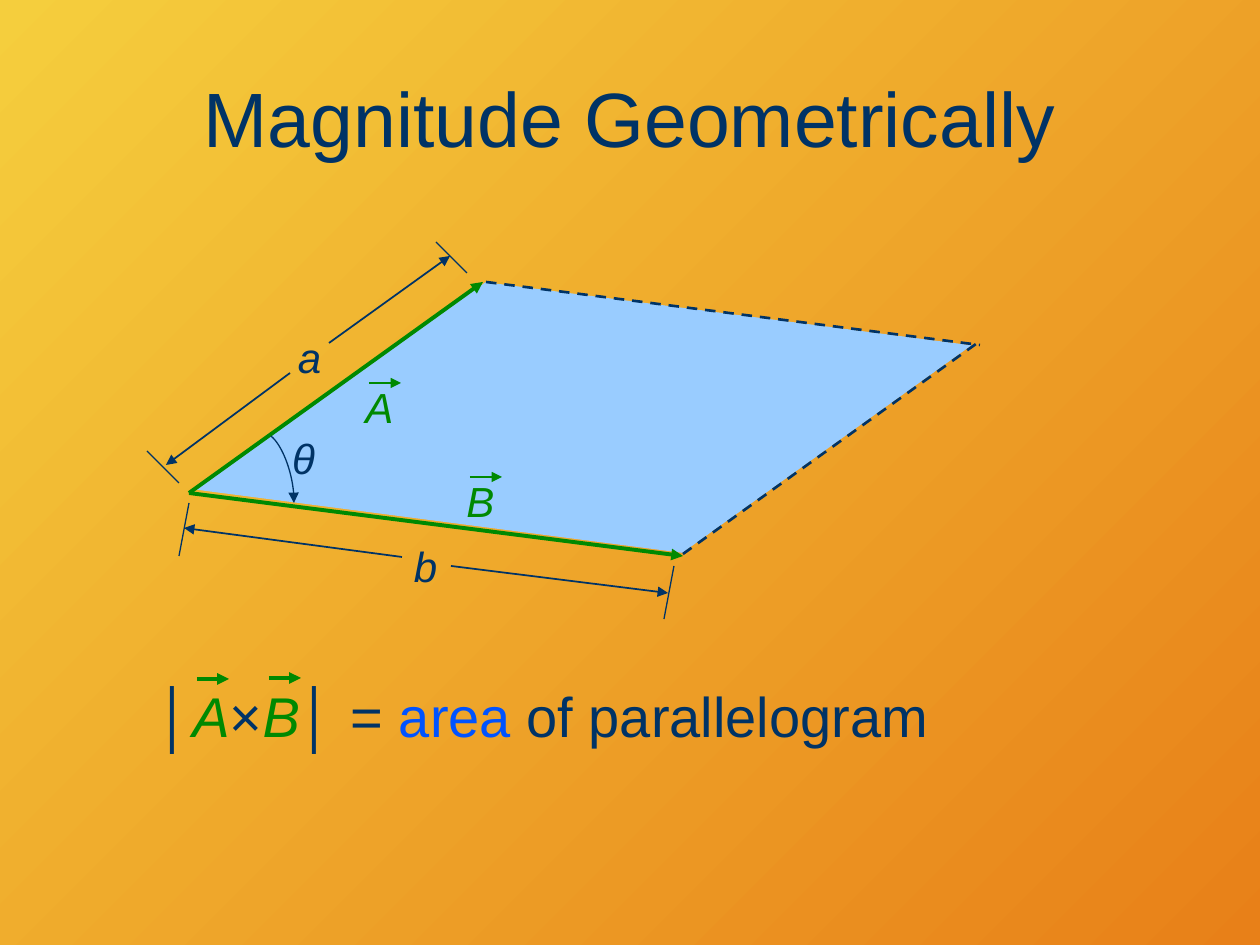
import pptx
import pptx.util
import pptx.dml.color
import pptx.enum.dml
import pptx.enum.shapes
import pptx.enum.text
import pptx.oxml
import pptx.oxml.ns

NAVY, GREEN, BLUE, SKY = "003366", "008901", "0053FF", "99CCFF"
SUNNY, AMBER = "F5CE3D", "E88018"
FONT = "Arial"
SCALE = 914400 / 126

TITLE = [("Magnitude Geometrically", NAVY, False)]
RULE = [
    ("│", NAVY, False), ("A", GREEN, True), ("×", NAVY, False), ("B", GREEN, True),
    ("│ = ", NAVY, False), ("area", BLUE, False), (" of parallelogram", NAVY, False),
]
LABELS = [
    ("A", GREEN, 353, 375), ("B", GREEN, 454, 469),
    ("a", NAVY, 283, 325), ("b", NAVY, 399, 534), ("θ", NAVY, 277, 426),
]
SIDES = [(189, 493, 483, 282), (189, 493, 683, 556)]
EDGES = [(683, 554, 976, 344), (486, 282, 980, 345)]
TICKS = [
    (189, 503, 179, 556), (674, 566, 664, 619),
    (179, 483, 147, 451), (467, 273, 436, 242),
]
SPANS = [
    (451, 566, 668, 593), (290, 373, 166, 465),
    (402, 557, 184, 528), (329, 343, 450, 256),
]
MARKS = [(369, 383, 1), (470, 477, 1), (197, 679, 2.25), (269, 678, 2.25)]
MARK = 32
ARC = [(271, 436), (282, 445), (295, 478), (294, 503)]


def px(n):
    return pptx.util.Emu(round(n * SCALE))


def color(code):
    return pptx.dml.color.RGBColor.from_string(code)


def style(line, code, width, arrow=False, dash=False):
    line.color.rgb = color(code)
    line.width = pptx.util.Pt(width)
    if dash:
        line.dash_style = pptx.enum.dml.MSO_LINE.DASH
    if arrow:
        tail = pptx.oxml.parse_xml(
            f'<a:tailEnd {pptx.oxml.ns.nsdecls("a")} type="triangle"/>')
        line._get_or_add_ln().append(tail)


def draw(slide, ends, code, width, arrow=False, dash=False):
    kind = pptx.enum.shapes.MSO_CONNECTOR.STRAIGHT
    item = slide.shapes.add_connector(kind, *map(px, ends))
    style(item.line, code, width, arrow, dash)
    item._element.spPr.append(pptx.oxml.parse_xml(
        f'<a:effectLst {pptx.oxml.ns.nsdecls("a")}/>'))


def write(slide, box, runs, size, center=True, middle=False):
    frame = slide.shapes.add_textbox(*map(px, box)).text_frame
    frame.word_wrap = True
    if middle:
        frame.vertical_anchor = pptx.enum.text.MSO_ANCHOR.MIDDLE
    para = frame.paragraphs[0]
    align = pptx.enum.text.PP_ALIGN
    para.alignment = align.CENTER if center else align.LEFT
    for text, code, slant in runs:
        run = para.add_run()
        run.text = text
        run.font.name = FONT
        run.font.size = pptx.util.Pt(size)
        run.font.italic = slant
        run.font.color.rgb = color(code)
    return para


def bend(slide, points):
    maker = slide.shapes.build_freeform(*points[0], scale=SCALE)
    maker.add_line_segments(points[1:], close=False)
    item = maker.convert_to_shape()
    item.shadow.inherit = False
    item.fill.background()
    style(item.line, NAVY, 0.75, arrow=True)
    name = pptx.oxml.ns.qn
    track = next(item._element.iter(name("a:path")))
    curve = pptx.oxml.parse_xml(f'<a:cubicBezTo {pptx.oxml.ns.nsdecls("a")}/>')
    for step in track.findall(name("a:lnTo")):
        curve.append(step[0])
        track.remove(step)
    track.append(curve)


def main():
    deck = pptx.Presentation()
    deck.slide_width, deck.slide_height = px(1260), px(945)
    slide = deck.slides.add_slide(deck.slide_layouts[6])
    fill = slide.background.fill
    fill.gradient()
    fill.gradient_angle = 315
    for stop, code in zip(fill.gradient_stops, (SUNNY, AMBER)):
        stop.color.rgb = color(code)

    area = slide.shapes.add_shape(
        pptx.enum.shapes.MSO_SHAPE.PARALLELOGRAM, *map(px, (209, 296, 750, 243)))
    area.adjustments[0] = 1.07
    area.rotation = 7.4
    area.shadow.inherit = False
    area.fill.solid()
    area.fill.fore_color.rgb = color(SKY)
    area.line.fill.background()

    write(slide, (63, 38, 1134, 158), TITLE, 44, middle=True)
    for ends in SIDES:
        draw(slide, ends, GREEN, 2.25, arrow=True)
    for ends in TICKS:
        draw(slide, ends, NAVY, 0.75)
    for ends in SPANS:
        draw(slide, ends, NAVY, 1, arrow=True)
    bend(slide, ARC)
    for ends in EDGES:
        draw(slide, ends, NAVY, 1.5, dash=True)
    for text, code, x, y in LABELS:
        write(slide, (x, y, 53, 63), [(text, code, True)], 24)
    for x, y, width in MARKS:
        draw(slide, (x, y, x + MARK, y), GREEN, width, arrow=True)
    para = write(slide, (145, 675, 1050, 95), RULE, 32, center=False)
    props = para._p.get_or_add_pPr()
    props.set("marL", str(px(48)))
    props.set("indent", str(px(-48)))
    deck.save("out.pptx")


if __name__ == "__main__":
    main()
